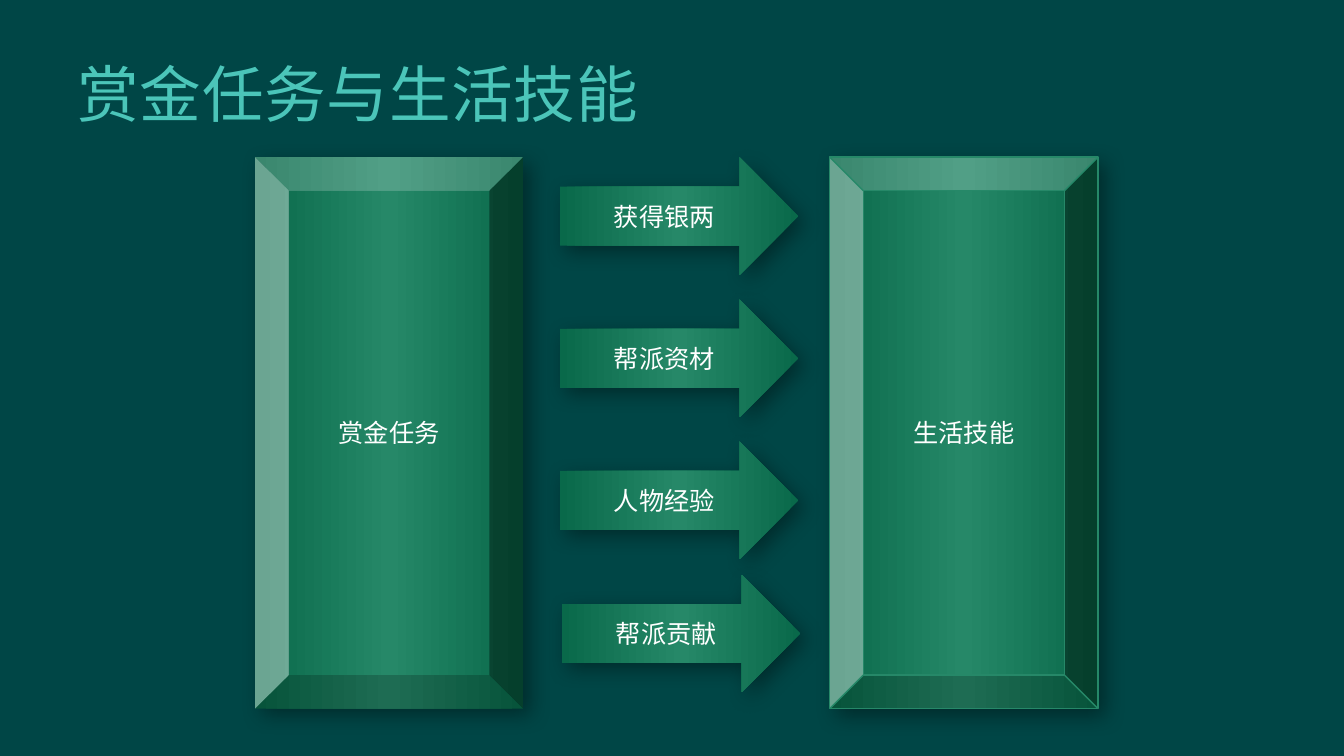
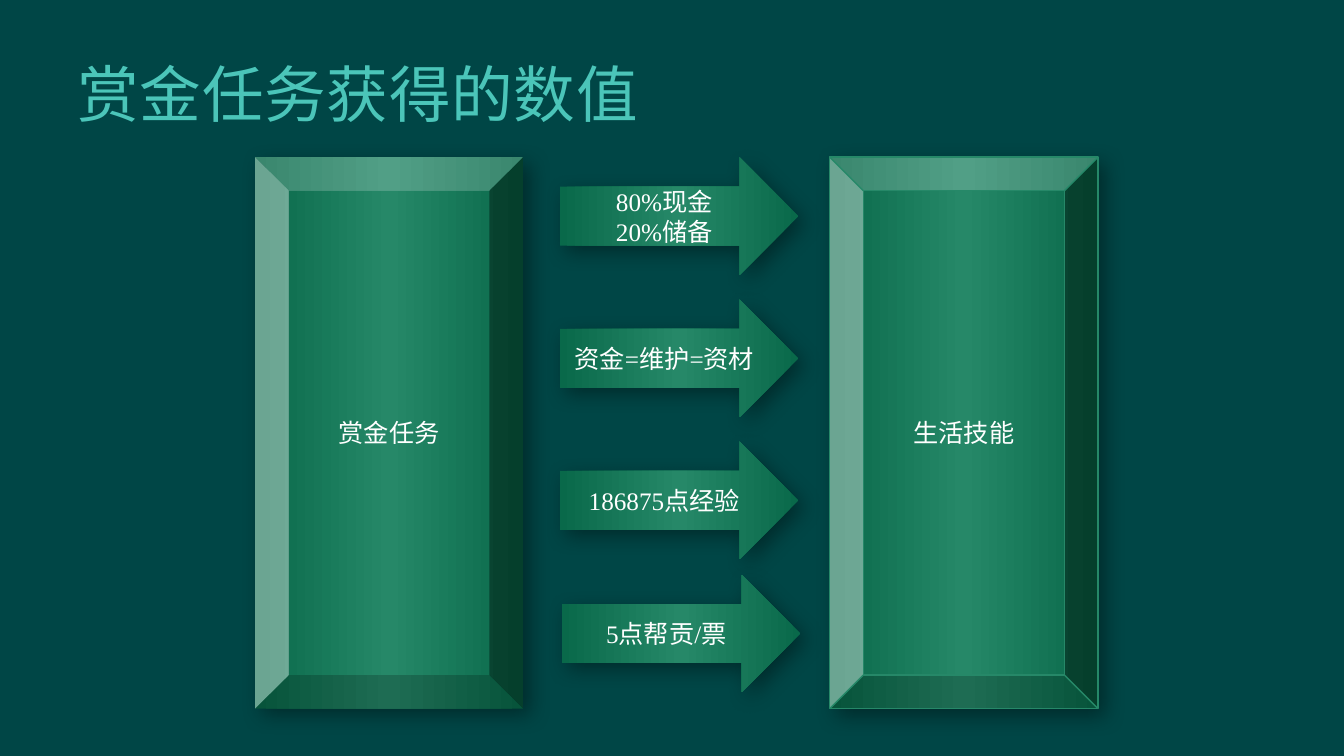
"""Two slides on how bounty tasks feed life skills."""
from copy import deepcopy

from lxml import etree
from pptx import Presentation
from pptx import util as u
from pptx.dml.color import RGBColor
from pptx.enum import shapes, text
from pptx.oxml import ns

HUES = {"back": "004646", "title": "4BC5B9", "edge": "09694A",
        "mid": "268868", "text": "FFFFFF", "shade": "000000"}
ARROW = shapes.MSO_SHAPE.RIGHT_ARROW
BEVEL = shapes.MSO_SHAPE.BEVEL
SPOTS = [(5.55, 1.56), (5.55, 2.97), (5.55, 4.38), (5.57, 5.7)]
SLIDES = [
    ("赏金任务与生活技能",
     [["获得银两"], ["帮派资材"], ["人物经验"], ["帮派贡献"]]),
    ("赏金任务获得的数值",
     [["80%现金", "20%储备"], ["资金=维护=资材"], ["186875点经验"], ["5点帮贡/票"]]),
]


def write(par, words, size, face, hue):
    run = par.add_run()
    run.text = words
    run.font.size = u.Pt(size)
    run.font.name = face
    run.font.color.rgb = RGBColor.from_string(HUES[hue])
    return run


def draw(slide, kind, left, top, wide, high, lines):
    shape = slide.shapes.add_shape(kind, *map(u.Inches, (left, top, wide, high)))
    shape.line.fill.background()
    shape.fill.gradient()
    shape.fill.gradient_angle = 0
    for stop in shape.fill.gradient_stops:
        stop.color.rgb = RGBColor.from_string(HUES["edge"])
    first = shape.element.spPr.find(".//" + ns.qn("a:gs"))
    mid = deepcopy(first)
    mid.set("pos", "50000")
    mid[0].set("val", HUES["mid"])
    first.addnext(mid)

    shape.shadow.inherit = False
    glow = shape.element.spPr.find(ns.qn("a:effectLst"))
    cast = etree.SubElement(glow, ns.qn("a:outerShdw"), blurRad=str(u.Pt(15)),
                            dist=str(u.Pt(6.2)), dir="2700000", algn="tl",
                            rotWithShape="0")
    tint = etree.SubElement(cast, ns.qn("a:srgbClr"), val=HUES["shade"])
    etree.SubElement(tint, ns.qn("a:alpha"), val="36000")

    frame = shape.text_frame
    frame.word_wrap = True
    frame.vertical_anchor = text.MSO_ANCHOR.MIDDLE
    for i, line in enumerate(lines):
        par = frame.add_paragraph() if i else frame.paragraphs[0]
        par.alignment = text.PP_ALIGN.CENTER
        write(par, line, 18, "Times New Roman", "text")
    return shape


deck = Presentation()
deck.slide_width, deck.slide_height = u.Inches(13.33), u.Inches(7.5)
back = deck.slide_master.background.fill
back.solid()
back.fore_color.rgb = RGBColor.from_string(HUES["back"])

for name, gains in SLIDES:
    slide = deck.slides.add_slide(deck.slide_layouts[5])
    title = slide.shapes.title
    title.left, title.top = u.Inches(0.67), u.Inches(0.3)
    title.width, title.height = u.Inches(11.34), u.Inches(1.25)
    title.text_frame.auto_size = text.MSO_AUTO_SIZE.NONE
    title.text_frame.vertical_anchor = text.MSO_ANCHOR.MIDDLE
    par = title.text_frame.paragraphs[0]
    par.alignment = text.PP_ALIGN.LEFT
    run = write(par, name, 44, "Roboto", "title")
    run.font._element.set("spc", "50")

    for (left, top), lines in zip(SPOTS, gains):
        draw(slide, ARROW, left, top, 2.37, 1.17, lines)
    draw(slide, BEVEL, 2.53, 1.56, 2.66, 5.47, ["赏金任务"])
    skill = draw(slide, BEVEL, 8.23, 1.56, 2.66, 5.47, ["生活技能"])
    skill.line.color.rgb = RGBColor.from_string(HUES["mid"])
    skill.line.width = u.Pt(1)

deck.save("out.pptx")
